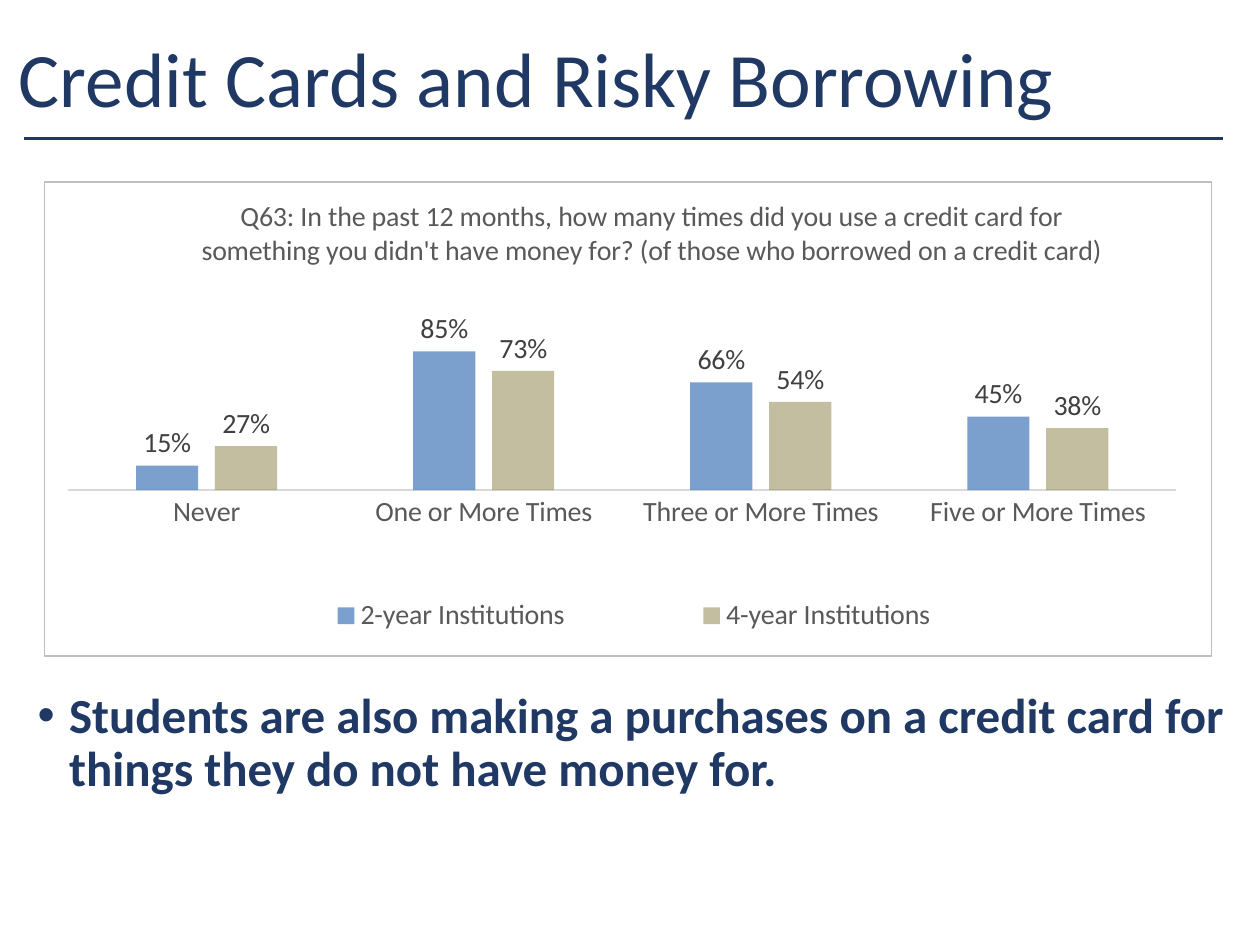
from dataclasses import dataclass

from lxml import etree
from pptx import Presentation
from pptx.chart.data import CategoryChartData
from pptx.dml.color import RGBColor
from pptx.enum import chart as ch, shapes, text
from pptx.oxml import parse_xml
from pptx.oxml.ns import nsdecls, qn
from pptx.util import Inches, Pt

WIDE, HIGH = 10, 7.5
FACE, NAVY, GREY = "Calibri", "203864", "595959"


@dataclass
class Box:
    """Place on the slide, as shares of its width and height."""
    x: float
    y: float
    w: float
    h: float

    def area(self) -> tuple:
        return (Inches(self.x * WIDE), Inches(self.y * HIGH),
                Inches(self.w * WIDE), Inches(self.h * HIGH))


@dataclass
class Group:
    name: str
    vals: tuple
    hue: str
    alpha: int


CATS = ("Never", "One or More Times", "Three or More Times", "Five or More Times")
GROUPS = (Group("2-year Institutions", (15, 85, 66, 45), "4F81BD", 75),
          Group("4-year Institutions", (27, 73, 54, 38), "948A54", 55))
ASK = ("Q63: In the past 12 months, how many times did you use a credit card for "
       "something you didn't have money for? (of those who borrowed on a credit card)")


def rgb(hue: str) -> RGBColor:
    return RGBColor.from_string(hue)


def style(font, size: float, hue: str, bold: bool = False) -> None:
    font.name, font.size, font.bold = FACE, Pt(size), bold
    font.color.rgb = rgb(hue)


def layout(parent, *spot: float, inner: bool = False) -> None:
    """Set x, y and, where given, width and height as shares of the chart."""
    old = parent.find(qn("c:layout"))
    if old is not None:
        parent.remove(old)
    keys = ("x", "y", "w", "h")[:len(spot)]
    body = '<c:layoutTarget val="inner"/>' if inner else ""
    body += "".join(f'<c:{k}Mode val="edge"/>' for k in keys[:2])
    body += "".join(f'<c:{k} val="{v}"/>' for k, v in zip(keys, spot))
    node = parse_xml(f'<c:layout {nsdecls("c")}><c:manualLayout>{body}'
                     '</c:manualLayout></c:layout>')
    lead = [n for n in parent if n.tag in (qn("c:tx"), qn("c:legendPos"))]
    parent.insert(parent.index(lead[-1]) + 1 if lead else 0, node)


def add_head(slide, words: str, box: Box) -> None:
    head = slide.shapes.title
    head.left, head.top, head.width, head.height = box.area()
    frame = head.text_frame
    frame.text = words
    frame.vertical_anchor = text.MSO_ANCHOR.MIDDLE
    para = frame.paragraphs[0]
    para.alignment, para.line_spacing = text.PP_ALIGN.LEFT, 0.9
    style(para.font, 44, NAVY)


def add_rule(slide, box: Box) -> None:
    x, y, w, _ = box.area()
    rule = slide.shapes.add_connector(shapes.MSO_CONNECTOR.STRAIGHT, x, y, x + w, y)
    rule.line.color.rgb, rule.line.width = rgb(NAVY), Pt(1.75)
    etree.SubElement(rule._element.spPr, qn("a:effectLst"))


def add_point(slide, words: str, box: Box) -> None:
    frame = slide.shapes.add_textbox(*box.area()).text_frame
    frame.word_wrap = True
    para = frame.paragraphs[0]
    para.text, para.line_spacing = words, 0.9
    props = para._p.get_or_add_pPr()
    props.set("marL", str(Inches(0.25)))
    props.set("indent", str(-Inches(0.25)))
    etree.SubElement(props, qn("a:buFont")).set("typeface", "Arial")
    etree.SubElement(props, qn("a:buChar")).set("char", "•")
    style(para.font, 28, NAVY, True)


def add_bars(slide, box: Box) -> None:
    data = CategoryChartData(number_format='0"%"')
    data.categories = CATS
    for group in GROUPS:
        data.add_series(group.name, group.vals)
    chart = slide.shapes.add_chart(
        ch.XL_CHART_TYPE.COLUMN_CLUSTERED, *box.area(), data).chart
    style(chart.font, 10, "000000")

    # Title and legend
    chart.has_title = True
    frame = chart.chart_title.text_frame
    frame.text = ASK
    style(frame.paragraphs[0].font, 16, GREY)
    layout(chart.chart_title._element, 0.13, 0.02)
    chart.has_legend = True
    key = chart.legend
    key.position, key.include_in_layout = ch.XL_LEGEND_POSITION.BOTTOM, False
    style(key.font, 16, GREY)
    layout(key._element, 0.14, 0.86, 0.73, 0.11)

    # Axes
    cat, val = chart.category_axis, chart.value_axis
    for axis, size in ((cat, 16), (val, 9)):
        axis.major_tick_mark = axis.minor_tick_mark = ch.XL_TICK_MARK.NONE
        axis.has_major_gridlines = False
        style(axis.tick_labels.font, size, GREY)
    cat.format.line.color.rgb, cat.format.line.width = rgb("D9D9D9"), Pt(0.75)
    val.minimum_scale, val.maximum_scale = 0, 90
    val.tick_label_position = ch.XL_TICK_LABEL_POSITION.NONE
    val.format.line.fill.background()

    # Bars and their labels
    plot = chart.plots[0]
    plot.gap_width, plot.overlap, plot.vary_by_categories = 219, -27, False
    layout(chart._chartSpace.chart.plotArea, 0.02, 0.34, 0.95, 0.31, inner=True)
    for bars, group in zip(plot.series, GROUPS):
        fill = bars.format.fill
        fill.solid()
        fill.fore_color.rgb = rgb(group.hue)
        tint = bars._element.spPr.find(".//" + qn("a:srgbClr"))
        etree.SubElement(tint, qn("a:alpha")).set("val", str(group.alpha * 1000))
        tags = bars.data_labels
        tags.show_value = True
        tags.number_format, tags.number_format_is_linked = '0"%"', False
        tags.position = ch.XL_LABEL_POSITION.OUTSIDE_END
        style(tags.font, 16, "404040")

    # Frame around the chart
    edge = parse_xml(f'<c:spPr {nsdecls("c", "a")}><a:noFill/><a:ln w="{Pt(0.75)}">'
                     '<a:solidFill><a:srgbClr val="BFBFBF"/></a:solidFill></a:ln></c:spPr>')
    chart._chartSpace.chart.addnext(edge)


def main() -> None:
    deck = Presentation()
    deck.slide_width, deck.slide_height = Inches(WIDE), Inches(HIGH)
    slide = deck.slides.add_slide(deck.slide_layouts[5])
    add_rule(slide, Box(0.019, 0.147, 0.952, 0))
    add_head(slide, "Credit Cards and Risky Borrowing", Box(0.005, 0.029, 0.862, 0.116))
    add_point(slide, "Students are also making a purchases on a credit card for "
              "things they do not have money for.", Box(0.02, 0.725, 0.969, 0.184))
    add_bars(slide, Box(0.035, 0.192, 0.927, 0.503))
    deck.save("out.pptx")


if __name__ == "__main__":
    main()
